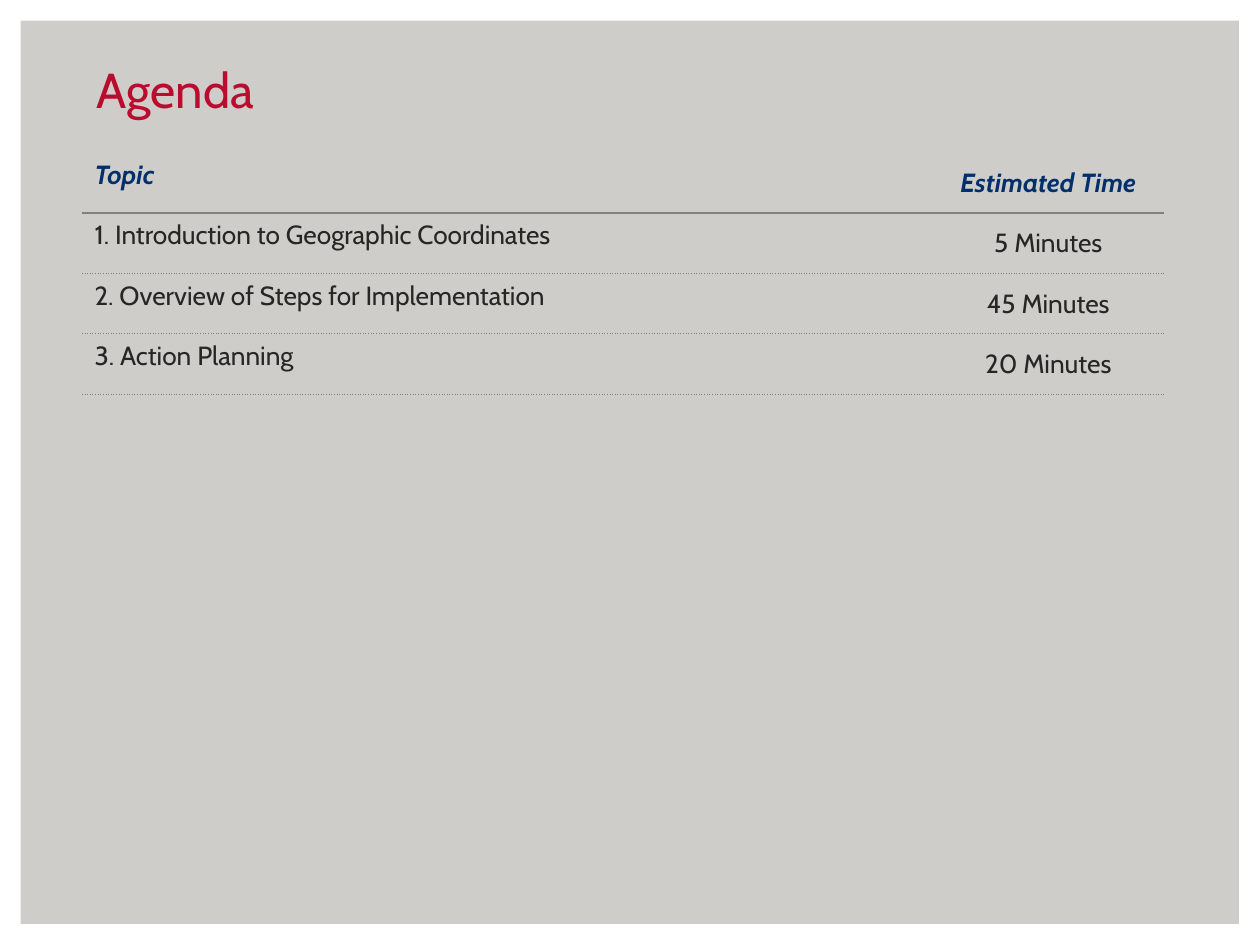
import pptx
import pptx.dml.color
import pptx.enum.shapes
import pptx.enum.text
import pptx.oxml
import pptx.oxml.ns
import pptx.util
from pptx.util import Inches

ALIGN = pptx.enum.text.PP_ALIGN
ANCHOR = pptx.enum.text.MSO_ANCHOR
NO_GRID_STYLE = "{2D5ABB26-0587-4C30-8999-92F81FD0307C}"

RED, NAVY, DARK, GRAY = "BA0C2F", "002F6C", "262626", "808080"
SOLID_RULE = (1, "solid")
DOTTED_RULE = (0.5, "sysDot")

AGENDA = [
    ("Topic", "Estimated Time"),
    ("1. Introduction to Geographic Coordinates", "5 Minutes"),
    ("2. Overview of Steps for Implementation", "45 Minutes"),
    ("3. Action Planning", "20 Minutes"),
]


def color(hex_string):
    return pptx.dml.color.RGBColor.from_string(hex_string)


def write_text(frame, text, size=15, fill=DARK, font="Cabin", bold=False,
               italic=False, align=ALIGN.LEFT, spacing=0):
    paragraph = frame.paragraphs[0]
    paragraph.alignment = align
    paragraph.space_before = paragraph.space_after = pptx.util.Pt(spacing)
    run = paragraph.add_run()
    run.text = text
    run.font.name = font
    run.font.size = pptx.util.Pt(size)
    run.font.bold = bold
    run.font.italic = italic
    run.font.color.rgb = color(fill)


def add_border(cell, side, rule):
    """Draw one edge of a cell; side is T or B, rule is (points, dash)."""
    width, dash = rule
    line = pptx.oxml.parse_xml(
        f'<a:ln{side} {pptx.oxml.ns.nsdecls("a")} w="{pptx.util.Pt(width)}">'
        f'<a:solidFill><a:srgbClr val="{GRAY}"/></a:solidFill>'
        f'<a:prstDash val="{dash}"/></a:ln{side}>')
    properties = cell._tc.get_or_add_tcPr()
    properties.insert(0 if side == "T" else len(properties) - 1, line)


class AgendaSlide:
    def __init__(self, presentation, background):
        self.slide = presentation.slides.add_slide(presentation.slide_layouts[6])
        fill = self.slide.background.fill
        fill.solid()
        fill.fore_color.rgb = color(background)

    def add_frame(self, width, height, thickness):
        shape = self.slide.shapes.add_shape(
            pptx.enum.shapes.MSO_SHAPE.FRAME, 0, 0, width, height)
        shape.adjustments[0] = thickness
        shape.shadow.inherit = False
        shape.fill.solid()
        shape.fill.fore_color.rgb = color("FFFFFF")
        shape.line.fill.background()

    def add_title(self, text, left, top, width, height):
        box = self.slide.shapes.add_textbox(left, top, width, height)
        box.text_frame.word_wrap = True
        write_text(box.text_frame, text, size=28, fill=RED)

    def add_agenda(self, rows, left, top, column_widths, row_height):
        shape = self.slide.shapes.add_table(
            len(rows), len(column_widths), left, top,
            sum(column_widths), row_height * len(rows))
        table = shape.table
        table.first_row = table.horz_banding = False
        table._tbl.tblPr.find(pptx.oxml.ns.qn("a:tableStyleId")).text = NO_GRID_STYLE
        for column, width in zip(table.columns, column_widths):
            column.width = width
        for row_index, values in enumerate(rows):
            table.rows[row_index].height = row_height
            for column_index, text in enumerate(values):
                self.fill_cell(table.cell(row_index, column_index), text,
                               row_index, is_time=column_index == 1)

    def fill_cell(self, cell, text, row_index, is_time):
        header = row_index == 0
        cell.fill.background()
        cell.vertical_anchor = ANCHOR.MIDDLE if is_time else ANCHOR.TOP
        write_text(cell.text_frame, text, fill=NAVY if header else DARK,
                   bold=header, italic=header, spacing=3,
                   align=ALIGN.CENTER if is_time else ALIGN.LEFT)
        add_border(cell, "B", SOLID_RULE if header else DOTTED_RULE)
        if not header:
            add_border(cell, "T", SOLID_RULE if row_index == 1 else DOTTED_RULE)


def main():
    presentation = pptx.Presentation()
    presentation.slide_width = Inches(10)
    presentation.slide_height = Inches(7.5)
    agenda = AgendaSlide(presentation, background="CFCDC9")
    agenda.add_frame(presentation.slide_width, presentation.slide_height, 0.022)
    agenda.add_agenda(AGENDA, Inches(0.65), Inches(1.21),
                      [Inches(6.75), Inches(1.84)], Inches(0.48))
    agenda.add_title("Agenda", Inches(0.67), Inches(0.42), Inches(8.5), Inches(0.57))
    presentation.save("out.pptx")


if __name__ == "__main__":
    main()
